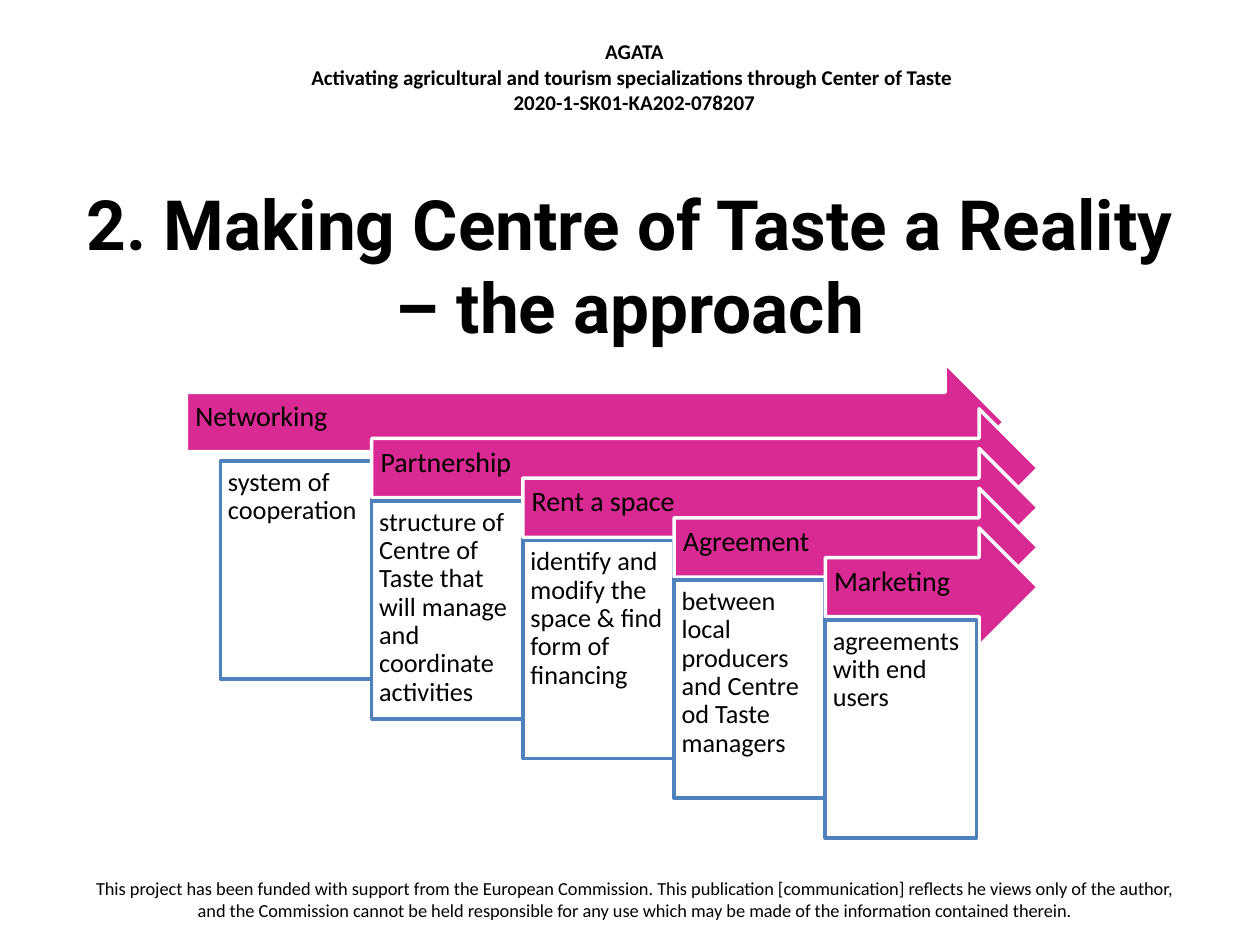
from dataclasses import dataclass

from pptx import Presentation
from pptx.dml.color import RGBColor
from pptx.enum.shapes import MSO_SHAPE
from pptx.enum.text import MSO_ANCHOR, MSO_AUTO_SIZE, PP_ALIGN
from pptx.util import Inches, Pt


@dataclass(frozen=True)
class Theme:
    ink: str = "000000"
    paper: str = "FFFFFF"
    arrow: str = "D92A93"
    outline: str = "4F81BD"
    body_font: str = "Calibri"
    title_font: str = "Roboto"
    title_size: float = 39.6
    arrow_size: float = 16
    box_size: float = 15
    header_size: float = 12
    footer_size: float = 10.5
    line_width: float = 2


@dataclass(frozen=True)
class Stage:
    name: str
    detail: str


THEME = Theme()
STAGES = [
    Stage("Networking", "system of cooperation"),
    Stage("Partnership", "structure of Centre of Taste that will manage and coordinate activities"),
    Stage("Rent a space", "identify and modify the space & find form of financing"),
    Stage("Agreement", "between local producers and Centre od Taste managers"),
    Stage("Marketing", "agreements with end users"),
]
HEADER = [
    "AGATA",
    "Activating agricultural and tourism specializations through Center of Taste ",
    "2020-1-SK01-KA202-078207",
]
FOOTER = (
    "This project has been funded with support from the European Commission. "
    "This publication [communication] reflects he views only of the author, "
    "and the Commission cannot be held responsible for any use which may be made "
    "of the information contained therein."
)

# Staircase geometry in inches
BOX_LEFT, BOX_TOP, BOX_W, BOX_H = 1.75, 3.66, 1.2, 1.73
STEP_Y = 0.315
ARROW_TOP, ARROW_H, ARROW_TIP = 2.93, 0.94, 8.24
FIRST_SHIFT_X, FIRST_SHIFT_Y = 0.27, 0.05  # the first arrow sits further left and up


def write(tf, *lines: str, size: float, font: str = THEME.body_font, bold: bool = False,
          align=PP_ALIGN.CENTER, anchor=MSO_ANCHOR.TOP, spacing: float = 1.0,
          insets: tuple = (0.1, 0.05, 0.1, 0.05)) -> None:
    """Fill a text frame, one paragraph per line."""
    tf.word_wrap = True
    tf.auto_size = MSO_AUTO_SIZE.NONE
    tf.vertical_anchor = anchor
    tf.margin_left, tf.margin_top, tf.margin_right, tf.margin_bottom = map(Inches, insets)
    for i, line in enumerate(lines):
        p = tf.paragraphs[0] if i == 0 else tf.add_paragraph()
        p.alignment = align
        p.line_spacing = spacing
        r = p.add_run()
        r.text = line
        r.font.name, r.font.size, r.font.bold = font, Pt(size), bold
        r.font.color.rgb = RGBColor.from_string(THEME.ink)


def add_textbox(slide, x: float, y: float, w: float, h: float, *lines: str, **fmt) -> None:
    sp = slide.shapes.add_textbox(Inches(x), Inches(y), Inches(w), Inches(h))
    write(sp.text_frame, *lines, **fmt)


def add_block(slide, kind, x: float, y: float, w: float, h: float,
              fill: str, line: str, text: str, **fmt) -> None:
    """Draw a filled, outlined shape with left-aligned text."""
    sp = slide.shapes.add_shape(kind, Inches(x), Inches(y), Inches(w), Inches(h))
    sp.shadow.inherit = False
    sp.fill.solid()
    sp.fill.fore_color.rgb = RGBColor.from_string(fill)
    sp.line.color.rgb = RGBColor.from_string(line)
    sp.line.width = Pt(THEME.line_width)
    write(sp.text_frame, text, align=PP_ALIGN.LEFT, spacing=0.9, **fmt)


def add_stage(slide, i: int, stage: Stage) -> None:
    """Draw one step: an arrow and the detail box below it."""
    x, drop = BOX_LEFT + i * BOX_W, i * STEP_Y
    dx, dy = (FIRST_SHIFT_X, FIRST_SHIFT_Y) if i == 0 else (0, 0)
    add_block(slide, MSO_SHAPE.RIGHT_ARROW, x - dx, ARROW_TOP + drop - dy,
              ARROW_TIP - x, ARROW_H, THEME.arrow, THEME.paper, stage.name,
              size=THEME.arrow_size, anchor=MSO_ANCHOR.MIDDLE,
              insets=(0.07, 0.07, 0.28, 0.15))
    add_block(slide, MSO_SHAPE.RECTANGLE, x, BOX_TOP + drop, BOX_W, BOX_H,
              THEME.paper, THEME.outline, stage.detail,
              size=THEME.box_size, insets=(0.06,) * 4)


def main() -> None:
    prs = Presentation()
    prs.slide_width, prs.slide_height = Inches(10), Inches(7.5)
    s = prs.slides.add_slide(prs.slide_layouts[5])

    # Project header and funding note
    add_textbox(s, 2.08, 0.26, 5.91, 0.71, *HEADER, size=THEME.header_size, bold=True)
    add_textbox(s, 0.54, 6.91, 9, 0.47, FOOTER, size=THEME.footer_size)

    # Title
    title = s.shapes.title
    title.left, title.top = Inches(0.5), Inches(1.47)
    title.width, title.height = Inches(9), Inches(1.25)
    write(title.text_frame, "2. Making Centre of Taste a Reality – the approach",
          size=THEME.title_size, font=THEME.title_font, bold=True,
          anchor=MSO_ANCHOR.MIDDLE)

    # Staircase of stages
    for i, stage in enumerate(STAGES):
        add_stage(s, i, stage)

    prs.save("out.pptx")


if __name__ == "__main__":
    main()
